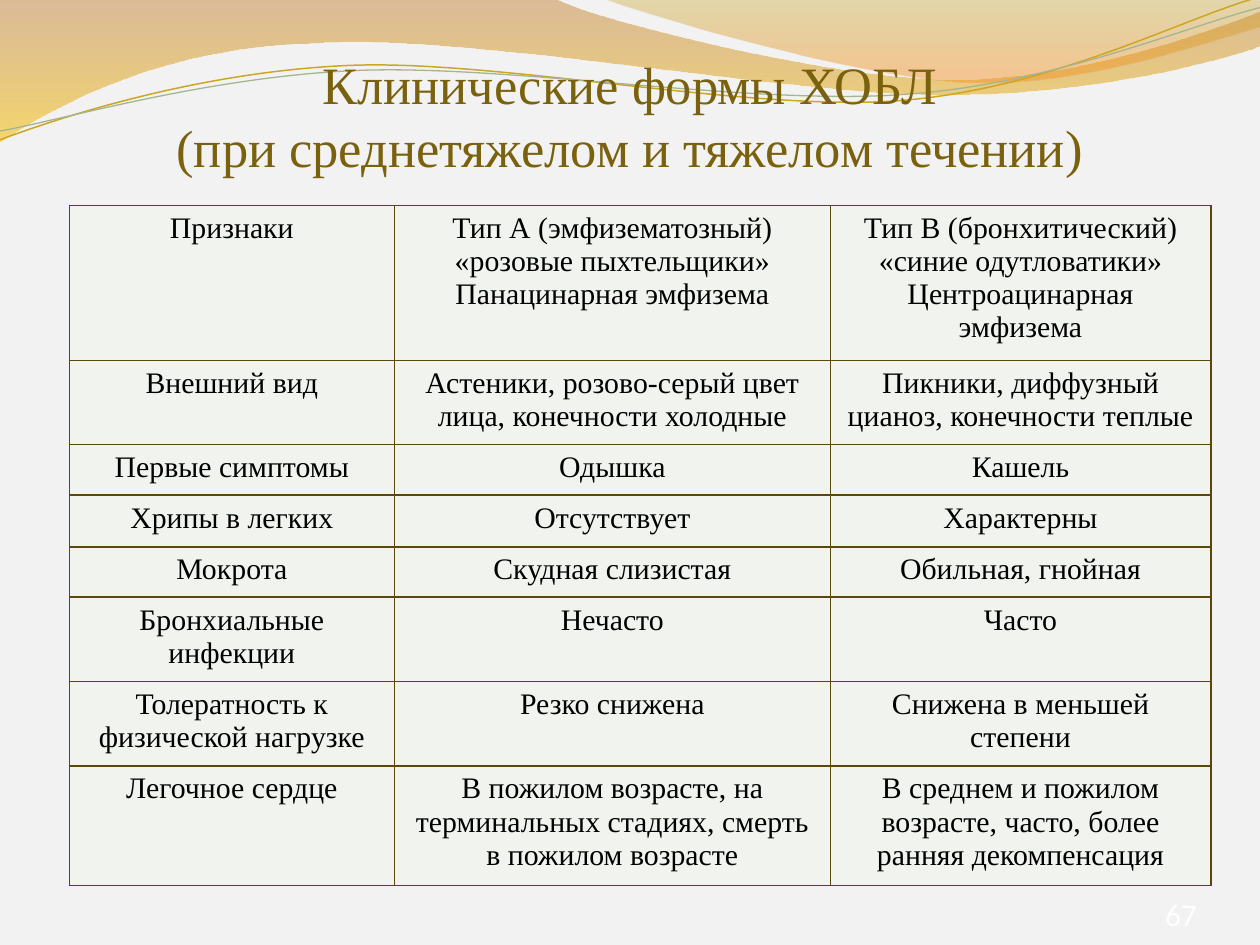
import copy
import pptx
import pptx.util
import pptx.dml.color
import pptx.enum.text
import pptx.enum.shapes
import pptx.oxml
import pptx.oxml.ns
import lxml.etree

Inches = pptx.util.Inches
Pt = pptx.util.Pt
qn = pptx.oxml.ns.qn
FONT = "Times New Roman"
HEX = {
    "back": "F2F2F2", "title": "7A610D", "text": "000000", "white": "FFFFFF",
    "cell": "F0F3EE", "edge": "5B4809", "gold": "CCA624", "green": "A5B592",
    "brown": "C07A28", "yellow": "F7BF00", "olive": "C09709", "orange": "F59320",
}

# Each wave: start point, then segments of one point (line) or three (curve)
BANDS = [
    ([(0, 0), [(4.4, -0.01)],
      [(4.76, 0.17), (6.64, 0.63), (7.58, 0.63)],
      [(8.53, 0.63), (9.58, 0.26), (10, 0.09)], [(10.01, 0.36)],
      [(9.83, 0.44), (8.7, 0.76), (7.46, 0.75)],
      [(6.22, 0.75), (3.82, 0.28), (2.57, 0.34)],
      [(1.29, 0.36), (0.46, 0.83), (-0.01, 1.13)], [(0, 0)]],
     [(0, "brown", 45), (1, "yellow", 55)]),
    ([(4.79, -0.01),
      [(5.09, 0.11), (6.82, 0.62), (7.69, 0.65)],
      [(8.56, 0.69), (9.61, 0.32), (10, 0.21)], [(10, 0)], [(4.79, -0.01)]],
     [(0, "olive", 30), (0.8, "orange", 45)]),
]
LINES = [
    ([(0, 1.11), [(0.48, 0.93), (1.58, 0.57), (2.77, 0.52)],
      [(3.95, 0.47), (5.93, 0.89), (7.13, 0.8)],
      [(8.33, 0.71), (9.38, 0.15), (9.98, -0.02)]], "gold", 0.85),
    ([(0, 1.04), [(0.47, 0.96), (1.64, 0.61), (2.83, 0.56)],
      [(4.03, 0.51), (5.97, 0.84), (7.17, 0.75)],
      [(8.36, 0.67), (9.41, 0.21), (10, 0.06)]], "green", 0.75),
]
COLS = [2.58, 3.46, 3.02]
ROWS = [1.23, 0.67, 0.4, 0.41, 0.4, 0.67, 0.67, 0.95]
SIGNS = [
    ["Признаки", "Тип А (эмфизематозный) «розовые пыхтельщики» Панацинарная эмфизема",
     "Тип В (бронхитический)\n«синие одутловатики»\nЦентроацинарная эмфизема"],
    ["Внешний вид", "Астеники, розово-серый цвет лица, конечности холодные",
     "Пикники, диффузный цианоз, конечности теплые"],
    ["Первые симптомы", "Одышка", "Кашель"],
    ["Хрипы в легких", "Отсутствует", "Характерны"],
    ["Мокрота", "Скудная слизистая", "Обильная, гнойная"],
    ["Бронхиальные инфекции", "Нечасто", "Часто"],
    ["Толератность к физической нагрузке", "Резко снижена", "Снижена в меньшей степени"],
    ["Легочное сердце",
     "В пожилом возрасте, на\nтерминальных стадиях, смерть в пожилом возрасте",
     "В среднем и пожилом возрасте, часто, более ранняя декомпенсация"],
]


def color(name):
    return pptx.dml.color.RGBColor.from_string(HEX[name])


def write(frame, text, size=17, tint="text"):
    frame.word_wrap = True
    frame.text = text
    for para in frame.paragraphs:
        para.alignment = pptx.enum.text.PP_ALIGN.CENTER
        for run in para.runs:
            run.font.name = FONT
            run.font.size = Pt(size)
            run.font.color.rgb = color(tint)


def bend(wave, route):
    """Join the line steps of each curved segment into one cubic curve."""
    steps = list(wave.element.iter(qn("a:lnTo")))
    for part in route[1:]:
        group, steps = steps[:len(part)], steps[len(part):]
        if len(part) == 3:
            curve = lxml.etree.Element(qn("a:cubicBezTo"))
            group[0].addprevious(curve)
            for step in group:
                curve.append(step[0])
                step.getparent().remove(step)


def add_wave(slide, box, route, close):
    left, top = box[:2]
    points = [route[0]] + [point for part in route[1:] for point in part]
    points = [(Inches(left + x), Inches(top + y)) for x, y in points]
    pen = slide.shapes.build_freeform(*points[0])
    pen.add_line_segments(points[1:], close=close)
    wave = pen.convert_to_shape()
    bend(wave, route)
    wave.shadow.inherit = False
    slide.shapes.title.element.addprevious(wave.element)  # keep behind the title
    return wave


def add_waves(slide, box):
    for route, stops in BANDS:
        band = add_wave(slide, box, route, True)
        band.line.fill.background()
        band.fill.gradient()
        band.fill.gradient_angle = 270
        marks = band.element.iter(qn("a:gs"))
        for stop, mark, (place, tint, alpha) in zip(band.fill.gradient_stops, marks, stops):
            stop.position = place
            stop.color.rgb = color(tint)
            lxml.etree.SubElement(mark[0], qn("a:alpha"), val=str(alpha * 1000))
    for route, tint, width in LINES:
        line = add_wave(slide, box, route, False)
        line.fill.background()
        line.line.color.rgb = color(tint)
        line.line.width = Pt(width)


def add_title(slide, box, text):
    title = slide.shapes.title
    title.left, title.top, title.width, title.height = map(Inches, box)
    frame = title.text_frame
    frame.auto_size = pptx.enum.text.MSO_AUTO_SIZE.NONE
    frame.vertical_anchor = pptx.enum.text.MSO_ANCHOR.BOTTOM
    frame.margin_left = frame.margin_right = frame.margin_bottom = 0
    frame.margin_top = Inches(0.05)
    write(frame, text, size=30, tint="title")


def add_edges(cell):
    props = cell._tc.get_or_add_tcPr()
    for spot, side in enumerate(("lnL", "lnR", "lnT", "lnB")):
        props.insert(spot, pptx.oxml.parse_xml(
            f'<a:{side} {pptx.oxml.ns.nsdecls("a")} w="{Pt(1)}"><a:solidFill>'
            f'<a:srgbClr val="{HEX["edge"]}"/></a:solidFill></a:{side}>'))


def add_grid(slide, box):
    table = slide.shapes.add_table(len(ROWS), len(COLS), *map(Inches, box)).table
    table.first_row = table.horz_banding = False
    for col, width in zip(table.columns, COLS):
        col.width = Inches(width)
    for row, height, texts in zip(table.rows, ROWS, SIGNS):
        row.height = Inches(height)
        for cell, text in zip(row.cells, texts):
            cell.fill.solid()
            cell.fill.fore_color.rgb = color("cell")
            write(cell.text_frame, text)
            add_edges(cell)


def add_number(slide, box, text):
    """Place the layout's slide number field on the slide."""
    kind = pptx.enum.shapes.PP_PLACEHOLDER.SLIDE_NUMBER
    base = next(holder for holder in slide.slide_layout.placeholders
                if holder.placeholder_format.type == kind)
    slide.shapes.title.element.getparent().append(copy.deepcopy(base.element))
    number = slide.shapes[-1]
    number.element.nvSpPr.cNvPr.set("id", str(len(slide.shapes) + 20))
    number.left, number.top, number.width, number.height = map(Inches, box)
    field = next(number.element.iter(qn("a:fld")))
    field.find(qn("a:t")).text = text
    fill = lxml.etree.SubElement(field.find(qn("a:rPr")), qn("a:solidFill"))
    lxml.etree.SubElement(fill, qn("a:srgbClr"), val=HEX["white"])


def main():
    deck = pptx.Presentation()
    deck.slide_width, deck.slide_height = Inches(10), Inches(7.5)
    deck.element.set("firstSlideNum", "67")
    slide = deck.slides.add_slide(deck.slide_layouts[5])
    slide.background.fill.solid()
    slide.background.fill.fore_color.rgb = color("back")
    add_waves(slide, (0, 0, 10, 1.14))
    add_title(slide, (0.5, 0.16, 9, 1.25),
              "Клинические формы ХОБЛ\v(при среднетяжелом и тяжелом течении)")
    add_grid(slide, (0.55, 1.63, sum(COLS), sum(ROWS)))
    add_number(slide, (8.6, 7.05, 1, 0.4), "67")
    deck.save("out.pptx")


if __name__ == "__main__":
    main()
